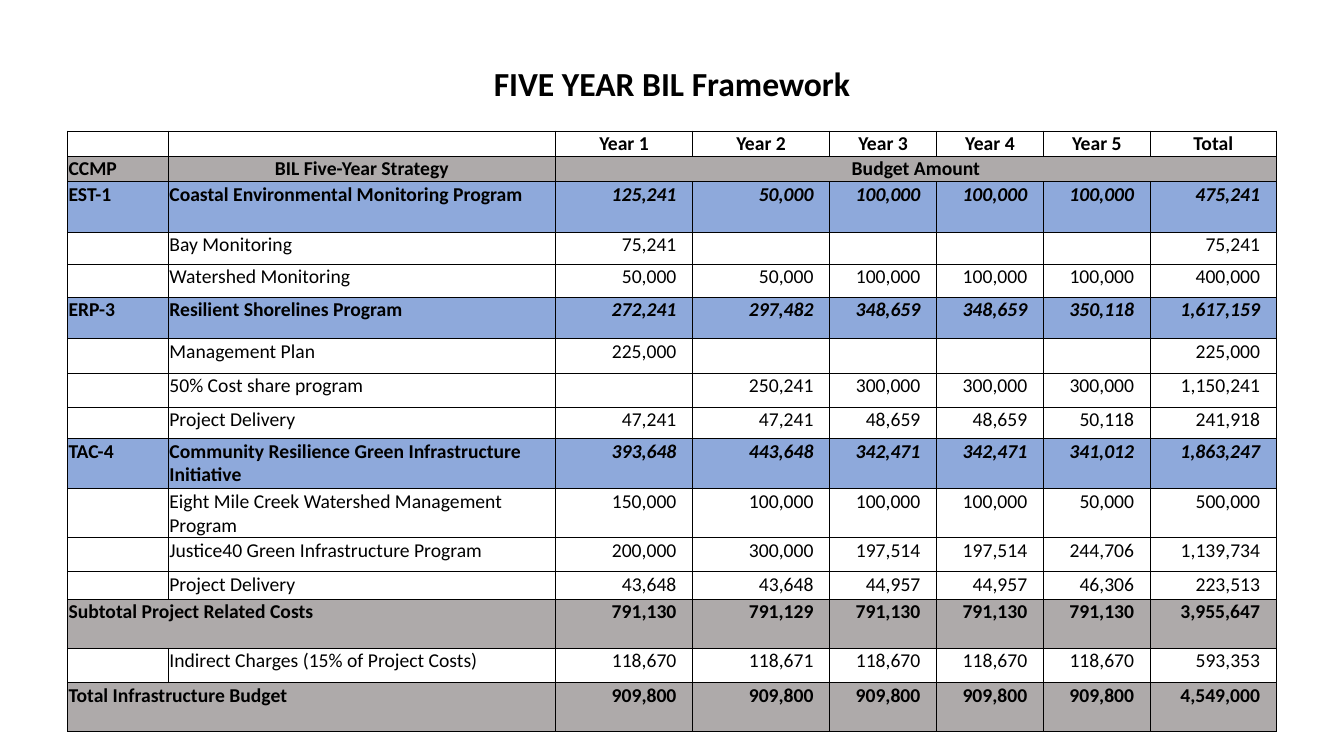
from lxml import etree
from pptx import Presentation
from pptx.dml.color import RGBColor
from pptx.enum.text import MSO_ANCHOR as Anchor, MSO_AUTO_SIZE as Fit, PP_ALIGN as Align
from pptx.oxml.ns import qn
from pptx.util import Inches, Pt

BLACK = RGBColor(0x00, 0x00, 0x00)
WHITE = RGBColor(0xFF, 0xFF, 0xFF)
GRAY = RGBColor(0xAE, 0xAA, 0xAA)
BLUE = RGBColor(0x8E, 0xA9, 0xDB)
FONT = "Calibri"

WIDTHS = [1, 3.84, 1.36, 1.36, 1.06, 1.06, 1.06, 1.25]

# Row style: fill, bold, italic numbers
STYLES = {
    "years": (WHITE, True, False),
    "head": (GRAY, True, False),
    "goal": (BLUE, True, True),
    "item": (WHITE, False, False),
    "sum": (GRAY, True, False),
}

# Style, height, code, label, five years and total
ROWS = [
    ("years", 0.25, "", "", "Year 1", "Year 2", "Year 3", "Year 4", "Year 5", "Total"),
    ("head", 0.25, "CCMP", "BIL Five-Year Strategy", "Budget Amount", "", "", "", "", ""),
    ("goal", 0.5, "EST-1", "Coastal Environmental Monitoring Program",
     125241, 50000, 100000, 100000, 100000, 475241),
    ("item", 0.32, "", "Bay Monitoring", 75241, "", "", "", "", 75241),
    ("item", 0.33, "", "Watershed Monitoring",
     50000, 50000, 100000, 100000, 100000, 400000),
    ("goal", 0.41, "ERP-3", "Resilient Shorelines Program",
     272241, 297482, 348659, 348659, 350118, 1617159),
    ("item", 0.34, "", "Management Plan", 225000, "", "", "", "", 225000),
    ("item", 0.34, "", "50% Cost share program",
     "", 250241, 300000, 300000, 300000, 1150241),
    ("item", 0.31, "", "Project Delivery",
     47241, 47241, 48659, 48659, 50118, 241918),
    ("goal", 0.5, "TAC-4", "Community Resilience Green Infrastructure Initiative",
     393648, 443648, 342471, 342471, 341012, 1863247),
    ("item", 0.48, "", "Eight Mile Creek Watershed Management Program",
     150000, 100000, 100000, 100000, 50000, 500000),
    ("item", 0.34, "", "Justice40 Green Infrastructure Program",
     200000, 300000, 197514, 197514, 244706, 1139734),
    ("item", 0.27, "", "Project Delivery",
     43648, 43648, 44957, 44957, 46306, 223513),
    ("sum", 0.49, "Subtotal Project Related Costs", "",
     791130, 791129, 791130, 791130, 791130, 3955647),
    ("item", 0.34, "", "Indirect Charges (15% of Project Costs)",
     118670, 118671, 118670, 118670, 118670, 593353),
    ("sum", 0.48, "Total Infrastructure Budget", "",
     909800, 909800, 909800, 909800, 909800, 4549000),
]


def set_font(para, size, bold, italic=False):
    font = para.font
    font.name, font.size = FONT, Pt(size)
    font.bold, font.italic = bold, italic
    font.color.rgb = BLACK


def add_title(slide, text):
    title = slide.shapes.title
    title.left, title.top = Inches(0), Inches(0.57)
    title.width, title.height = Inches(13.33), Inches(0.5)
    frame = title.text_frame
    frame.text = text
    frame.auto_size = Fit.NONE
    frame.vertical_anchor = Anchor.MIDDLE
    frame.paragraphs[0].alignment = Align.CENTER
    set_font(frame.paragraphs[0], 24, True)


def add_border(cell):
    props = cell._tc.get_or_add_tcPr()
    for side in ("lnL", "lnR", "lnT", "lnB"):
        line = etree.SubElement(props, qn("a:" + side), w=str(Pt(0.5)))
        fill = etree.SubElement(line, qn("a:solidFill"))
        etree.SubElement(fill, qn("a:srgbClr"), val=str(BLACK))


def fill_cell(cell, value, style, col):
    color, bold, slant = STYLES[style]
    number = isinstance(value, int)
    add_border(cell)
    cell.fill.solid()
    cell.fill.fore_color.rgb = color
    cell.margin_left = cell.margin_top = Inches(0.01)
    cell.margin_right = Inches(0.16 if number else 0.01)
    cell.margin_bottom = 0
    cell.text = f"{value:,}" if number else value
    para = cell.text_frame.paragraphs[0]
    if number:
        para.alignment = Align.RIGHT
    elif style in ("years", "head") and col > 0:
        para.alignment = Align.CENTER
    set_font(para, 14, bold, number and slant)
    if value == "":  # keeps empty cells from stretching the row
        para._p.get_or_add_endParaRPr().set("sz", "1400")


def add_budget(slide):
    heights = [row[1] for row in ROWS]
    frame = slide.shapes.add_table(
        len(ROWS), len(WIDTHS), Inches(0.67), Inches(1.3),
        Inches(sum(WIDTHS)), Inches(sum(heights)))
    table = frame.table
    table.first_row = table.horz_banding = False
    for col, width in zip(table.columns, WIDTHS):
        col.width = Inches(width)
    for r, (style, height, *values) in enumerate(ROWS):
        table.rows[r].height = Inches(height)
        for c, value in enumerate(values):
            fill_cell(table.cell(r, c), value, style, c)
        # Wide cells
        if style == "head":
            table.cell(r, 2).merge(table.cell(r, 7))
        elif style == "sum":
            table.cell(r, 0).merge(table.cell(r, 1))


def main():
    deck = Presentation()
    deck.slide_width, deck.slide_height = Inches(13.33), Inches(7.5)
    slide = deck.slides.add_slide(deck.slide_layouts[5])
    add_budget(slide)
    add_title(slide, "FIVE YEAR BIL Framework")
    deck.save("out.pptx")


if __name__ == "__main__":
    main()
